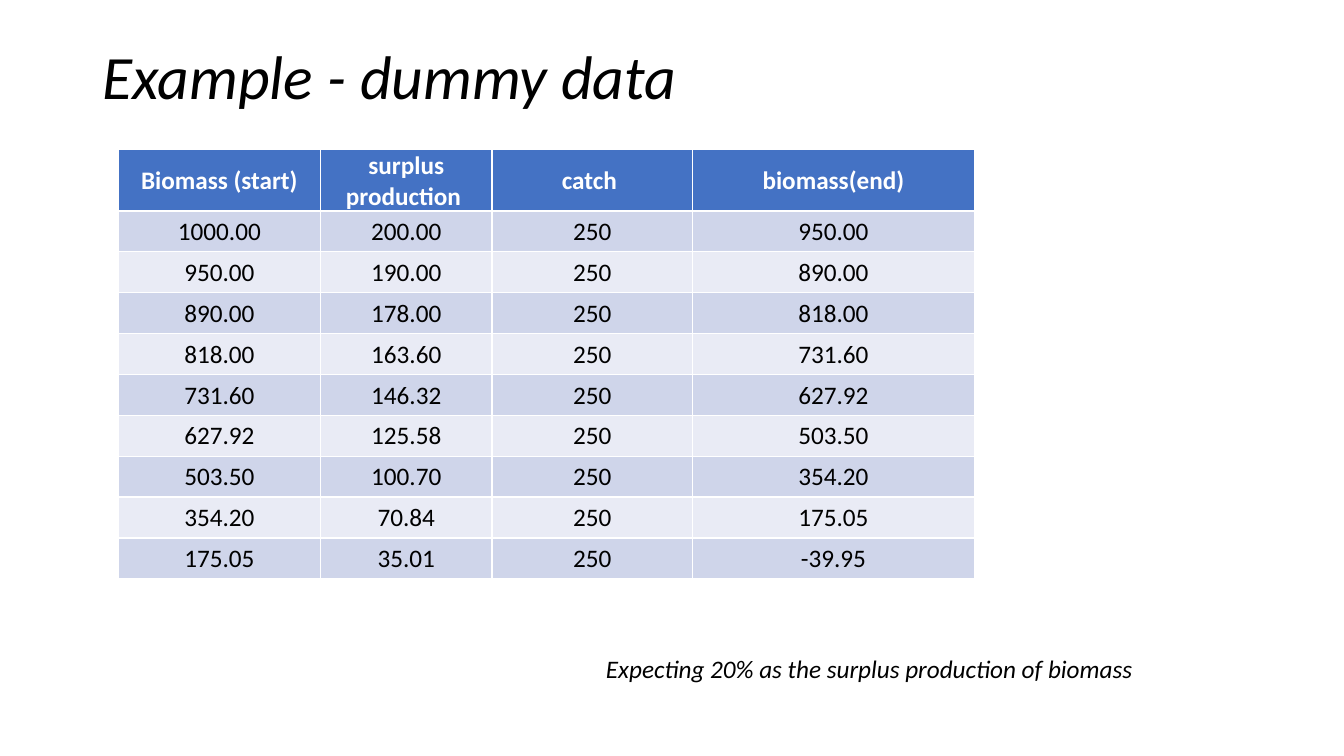
from pptx import Presentation
from pptx.dml.color import RGBColor
from pptx.enum.text import MSO_ANCHOR, MSO_AUTO_SIZE, PP_ALIGN
from pptx.util import Cm, Pt

LEFT, CENTER = PP_ALIGN.LEFT, PP_ALIGN.CENTER
MIDDLE = MSO_ANCHOR.MIDDLE
GROW = MSO_AUTO_SIZE.SHAPE_TO_FIT_TEXT

TITLE = "Example - dummy data"
NOTE = "Expecting 20% as the surplus production of biomass"
HEADER = ("Biomass (start)", "surplus production ", "catch ", "biomass(end)")
ROWS = [
    ("1000.00", "200.00", "250", "950.00"),
    ("950.00", "190.00", "250", "890.00"),
    ("890.00", "178.00", "250", "818.00"),
    ("818.00", "163.60", "250", "731.60"),
    ("731.60", "146.32", "250", "627.92"),
    ("627.92", "125.58", "250", "503.50"),
    ("503.50", "100.70", "250", "354.20"),
    ("354.20", "70.84", "250", "175.05"),
    ("175.05", "35.01", "250", "-39.95"),
]
COL_WIDTHS = (5.1, 4.32, 5.05, 7.11)
ROW_HEIGHT = 1.03
HEADER_FILL = "4472C4"
BAND_FILLS = ("E9EBF5", "CFD5EA")


def rgb(value):
    return RGBColor.from_string(value)


def write(tf, text, size=18, color="000000", bold=False, italic=False,
          align=LEFT, spacing=None):
    p = tf.paragraphs[0]
    p.alignment = align
    p.line_spacing = spacing
    r = p.add_run()
    r.text = text
    font = r.font
    font.name, font.size = "Calibri", Pt(size)
    font.bold, font.italic = bold, italic
    font.color.rgb = rgb(color)


def add_data_table(slide):
    rows = [HEADER] + ROWS
    frame = slide.shapes.add_table(
        len(rows), len(HEADER), Cm(2.98), Cm(3.76),
        Cm(sum(COL_WIDTHS)), Cm(ROW_HEIGHT * len(rows)))
    table = frame.table
    for col, width in zip(table.columns, COL_WIDTHS):
        col.width = Cm(width)
    for i, values in enumerate(rows):
        table.rows[i].height = Cm(ROW_HEIGHT)
        is_header = i == 0
        for j, value in enumerate(values):
            cell = table.cell(i, j)
            cell.fill.solid()
            cell.fill.fore_color.rgb = rgb(HEADER_FILL if is_header else BAND_FILLS[i % 2])
            cell.vertical_anchor = MIDDLE
            cell.margin_left = cell.margin_right = cell.margin_top = Cm(0.03)
            cell.margin_bottom = 0
            write(cell.text_frame, value, bold=is_header, align=CENTER,
                  color="FFFFFF" if is_header else "000000")


def main():
    prs = Presentation()
    prs.slide_width, prs.slide_height = Cm(33.87), Cm(19.05)
    slide = prs.slides.add_slide(prs.slide_layouts[5])

    title = slide.shapes.title
    title.left, title.top = Cm(2.33), Cm(1.01)
    title.width, title.height = Cm(29.21), Cm(1.98)
    title.text_frame.vertical_anchor = MIDDLE
    write(title.text_frame, TITLE, size=44, italic=True, spacing=0.9)

    note = slide.shapes.add_textbox(Cm(15.02), Cm(16.33), Cm(13.94), Cm(1.03))
    note.text_frame.word_wrap = False
    note.text_frame.auto_size = GROW
    write(note.text_frame, NOTE, italic=True)

    add_data_table(slide)
    prs.save("out.pptx")


if __name__ == "__main__":
    main()
